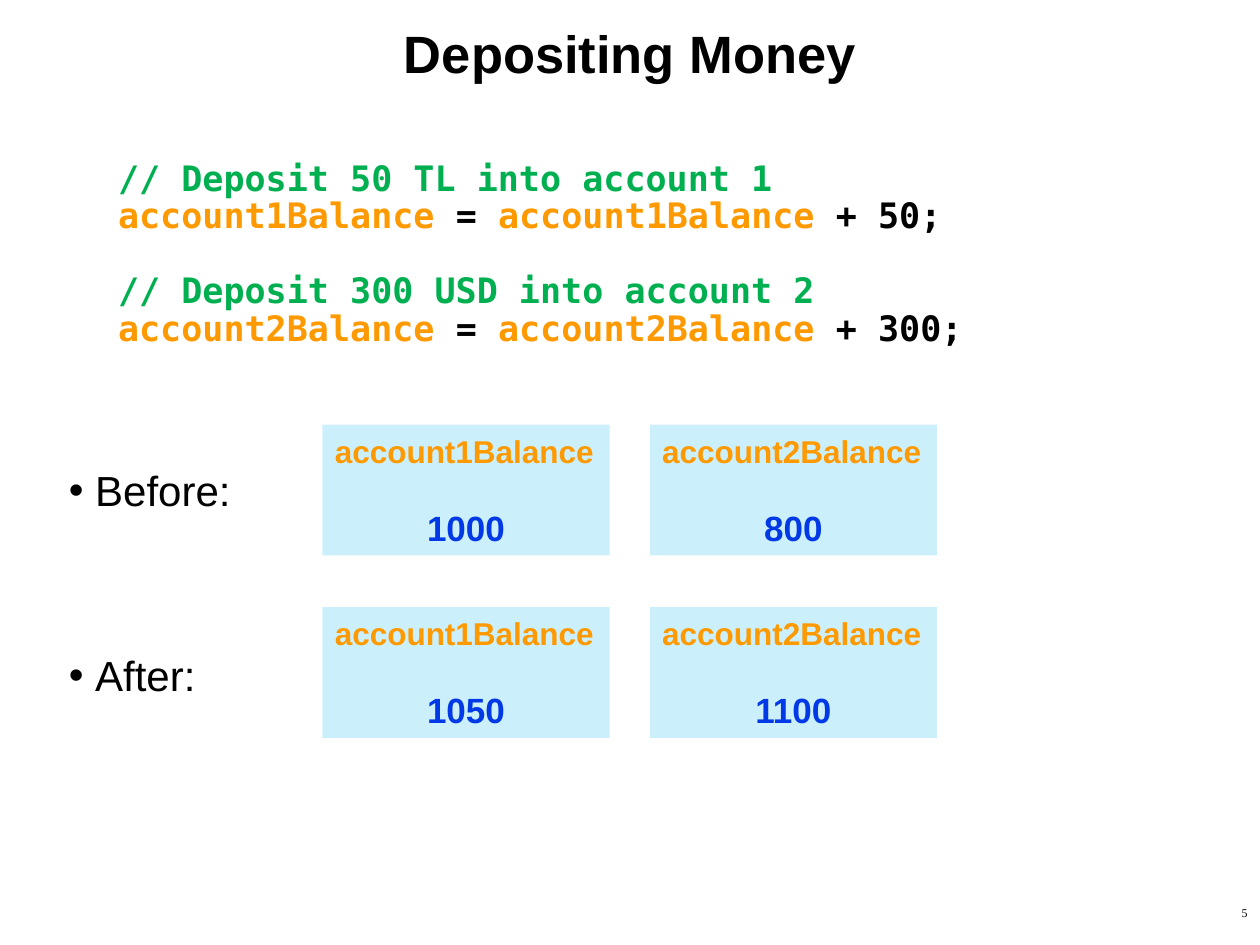
import pptx
import pptx.dml.color
import pptx.enum.shapes
import pptx.enum.text
import pptx.oxml.ns
import pptx.util
from lxml import etree

Cm, Pt = pptx.util.Cm, pptx.util.Pt
RGBColor = pptx.dml.color.RGBColor
ALIGN = pptx.enum.text.PP_ALIGN
ANCHOR = pptx.enum.text.MSO_ANCHOR
qn = pptx.oxml.ns.qn

BLACK = RGBColor(0x00, 0x00, 0x00)
GREEN = RGBColor(0x00, 0xB0, 0x50)
ORANGE = RGBColor(0xFF, 0x99, 0x00)
BLUE = RGBColor(0x00, 0x39, 0xE5)
SKY = RGBColor(0x00, 0xB0, 0xF0)

SANS, MONO, SERIF = "Arial", "DejaVu Sans Mono", "Times New Roman"


def add_run(p, text, size=20, font=SANS, color=BLACK, bold=False):
    r = p.add_run()
    r.text = text
    r.font.size = Pt(size)
    r.font.name = font
    r.font.color.rgb = color
    r.font.bold = bold


def next_paragraph(tf):
    """Return the first paragraph while it is empty, else a new one."""
    p = tf.paragraphs[-1]
    return tf.add_paragraph() if p.runs else p


class SlideBuilder:
    def __init__(self, prs):
        self.s = prs.slides.add_slide(prs.slide_layouts[5])

    def title(self, text, width, height):
        sp = self.s.shapes.title
        sp.left, sp.top, sp.width, sp.height = 0, 0, width, height
        tf = sp.text_frame
        tf.vertical_anchor = ANCHOR.MIDDLE
        p = tf.paragraphs[0]
        p.alignment = ALIGN.CENTER
        add_run(p, text, size=30, bold=True)

    def text_box(self, left, top, width, height):
        tf = self.s.shapes.add_textbox(left, top, width, height).text_frame
        tf.word_wrap = True
        return tf

    def code_line(self, tf, parts, before=0):
        """Add one line of code from (text, colour) parts."""
        p = next_paragraph(tf)
        p.line_spacing = 0.9
        p.space_before = Pt(before)
        p._p.get_or_add_pPr().set("marL", str(Cm(0.99)))
        for text, color in parts:
            add_run(p, text, font=MONO, color=color, bold=True)

    def bullet(self, tf, text, before):
        p = next_paragraph(tf)
        p.space_before, p.space_after = Pt(before), Pt(6)
        pPr = p._p.get_or_add_pPr()
        pPr.set("marL", str(Cm(0.53)))
        pPr.set("indent", str(Cm(-0.53)))
        etree.SubElement(pPr, qn("a:buFont"), typeface=SANS)
        etree.SubElement(pPr, qn("a:buChar"), char="•")
        add_run(p, text, size=24)

    def variable_box(self, left, top, name, value):
        sp = self.s.shapes.add_shape(
            pptx.enum.shapes.MSO_SHAPE.RECTANGLE, left, top, Cm(5.79), Cm(2.64))
        sp.shadow.inherit = False
        sp.line.fill.background()
        sp.fill.solid()
        sp.fill.fore_color.rgb = SKY
        color = sp._element.spPr.find(".//" + qn("a:srgbClr"))
        etree.SubElement(color, qn("a:alpha"), val="20000")
        tf = sp.text_frame
        tf.word_wrap = True
        tf.vertical_anchor = ANCHOR.MIDDLE
        p = next_paragraph(tf)
        p.alignment = ALIGN.JUSTIFY
        add_run(p, name, size=18, color=ORANGE, bold=True)
        p = next_paragraph(tf)
        p.alignment = ALIGN.CENTER
        p.space_before = Pt(21)
        add_run(p, str(value), color=BLUE, bold=True)

    def page_number(self, text):
        tf = self.text_box(Cm(20.12), Cm(18.14), Cm(5.28), Cm(0.91))
        p = tf.paragraphs[0]
        p.alignment = ALIGN.RIGHT
        add_run(p, text, size=6.8, font=SERIF)


def main():
    prs = pptx.Presentation()
    prs.slide_width, prs.slide_height = Cm(25.4), Cm(19.05)
    slide = SlideBuilder(prs)
    slide.title("Depositing Money", prs.slide_width, Cm(2.13))

    accounts = ["account1Balance", "account2Balance"]
    deposits = [(50, "TL"), (300, "USD")]
    body = slide.text_box(Cm(1.14), Cm(3.12), Cm(23.24), Cm(14.99))
    for i, (name, (amount, currency)) in enumerate(zip(accounts, deposits)):
        comment = f"// Deposit {amount} {currency} into account {i + 1}"
        slide.code_line(body, [(comment, GREEN)], before=21 * i)
        slide.code_line(body, [(name, ORANGE), (" = ", BLACK),
                               (name, ORANGE), (f" + {amount};", BLACK)])

    states = [("Before:", 66, [1000, 800]), ("After:", 71, [1050, 1100])]
    for row, (label, gap, balances) in enumerate(states):
        slide.bullet(body, label, gap)
        for col, (name, balance) in enumerate(zip(accounts, balances)):
            slide.variable_box(Cm(6.5 + 6.6 * col), Cm(8.56 + 3.68 * row),
                               name, balance)

    slide.page_number("5")
    prs.save("out.pptx")


if __name__ == "__main__":
    main()
